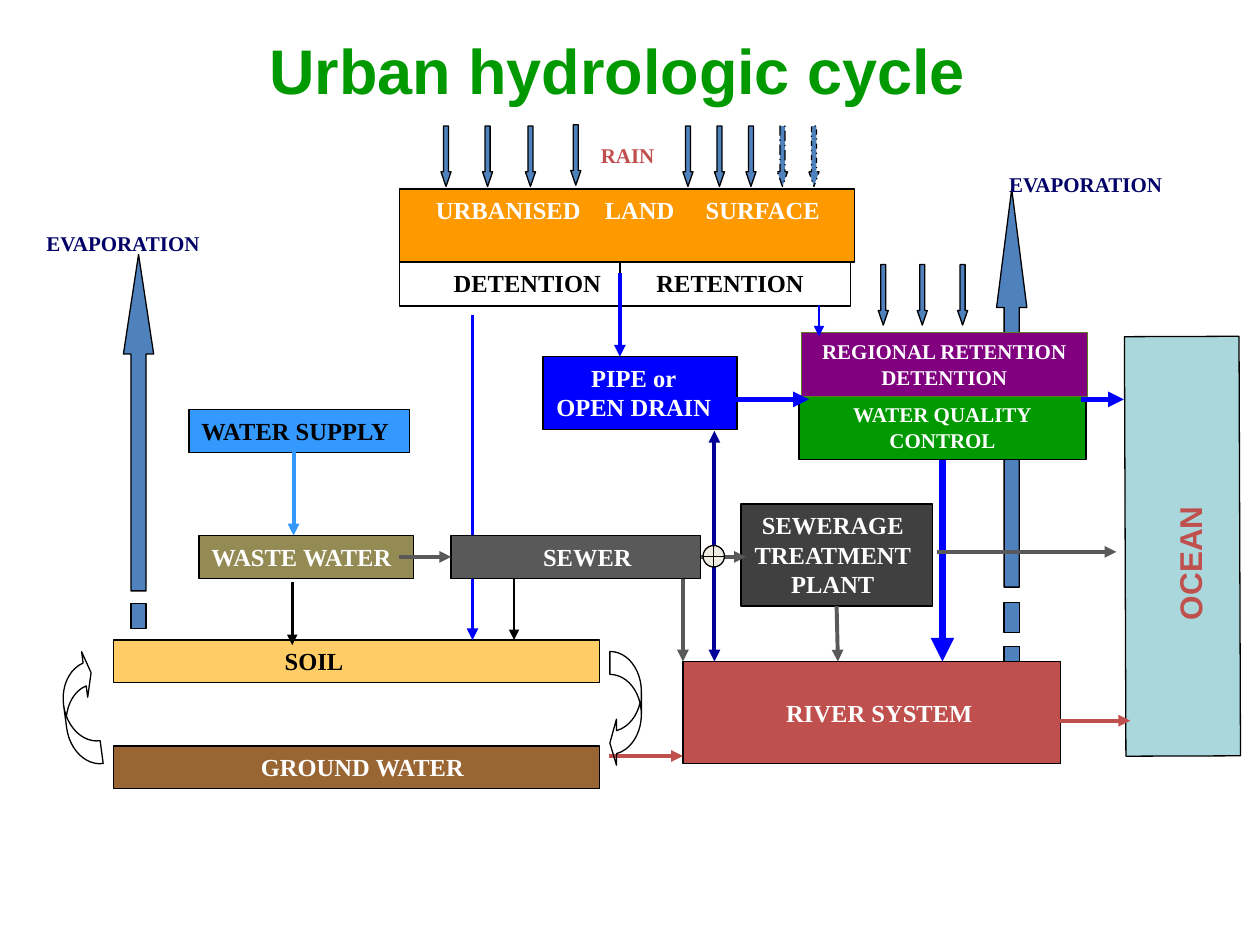
from dataclasses import dataclass
from typing import NamedTuple

from lxml import etree
from pptx import Presentation
from pptx.dml.color import RGBColor
from pptx.enum.dml import MSO_LINE
from pptx.enum.shapes import MSO_CONNECTOR, MSO_SHAPE
from pptx.enum.text import MSO_ANCHOR, MSO_AUTO_SIZE, PP_ALIGN
from pptx.oxml.ns import qn
from pptx.util import Inches, Pt

LEFT, CENTER = PP_ALIGN.LEFT, PP_ALIGN.CENTER
TOP, MIDDLE = MSO_ANCHOR.TOP, MSO_ANCHOR.MIDDLE
RECTANGLE, DOWN_ARROW = MSO_SHAPE.RECTANGLE, MSO_SHAPE.DOWN_ARROW
CURVED_ARROW, JUNCTION = MSO_SHAPE.CURVED_LEFT_ARROW, MSO_SHAPE.FLOWCHART_OR
STRAIGHT = MSO_CONNECTOR.STRAIGHT
LONG_DASH_DOT, DASH_DOT = MSO_LINE.LONG_DASH_DOT, MSO_LINE.DASH_DOT
BOTTOM_SIDE, LEFT_SIDE = 2, 1


@dataclass(frozen=True)
class Theme:
    heading_font: str = "Arial"
    body_font: str = "Times New Roman"
    title_size: int = 36
    ocean_size: int = 18
    body_size: int = 14
    small_size: int = 12
    black: str = "000000"
    white: str = "FFFFFF"
    green: str = "009900"
    blue: str = "0000FF"
    light_blue: str = "3399FF"
    dark_blue: str = "000099"
    navy: str = "000066"
    steel: str = "4F81BD"
    red: str = "C0504D"
    gray: str = "595959"
    dark_gray: str = "404040"
    aqua: str = "A9D7DB"
    purple: str = "800080"
    olive: str = "5E7D21"
    khaki: str = "948A54"
    orange: str = "FF9900"
    sand: str = "FFCC66"
    brown: str = "996633"
    cream: str = "EEECE1"


THEME = Theme()


class Box(NamedTuple):
    text: str
    left: float
    top: float
    width: float
    height: float
    fill: str | None
    color: str = THEME.white
    size: int = THEME.body_size
    font: str = THEME.body_font
    align: PP_ALIGN = LEFT
    anchor: MSO_ANCHOR = TOP
    insets: tuple[float, float, float] = (0.1, 0.05, 0.1)
    tabs: tuple[float, ...] = ()
    line: str = THEME.black
    line_width: float = 0.75
    rotation: float = 0


class Flow(NamedTuple):
    start: tuple[float, float]
    end: tuple[float, float]
    color: str
    width: float = 2.25
    source: str | None = None
    target: str | None = None


BOXES = {
    "ocean": Box("OCEAN", 7.72, 3.88, 3.33, 0.91, THEME.aqua, THEME.red, THEME.ocean_size,
                 THEME.heading_font, CENTER, insets=(0.1, 0.36, 0.37), rotation=269.8),
    "river": Box("RIVER SYSTEM", 5.42, 5.25, 3, 0.81, THEME.red, anchor=MIDDLE, insets=(0.82, 0.05, 0.1)),
    "quality": Box("WATER QUALITY\nCONTROL", 6.34, 3.14, 2.28, 0.51, THEME.green,
                   size=THEME.small_size, align=CENTER),
    "regional": Box("REGIONAL RETENTION\nDETENTION", 6.36, 2.64, 2.27, 0.51, THEME.purple,
                    size=THEME.small_size, align=CENTER, line=THEME.olive),
    "waste": Box("WASTE WATER", 1.58, 4.25, 1.7, 0.34, THEME.khaki),
    "supply": Box("WATER SUPPLY", 1.5, 3.25, 1.75, 0.34, THEME.light_blue, THEME.black),
    "detention": Box("DETENTION", 3.17, 2.08, 1.75, 0.35, None, THEME.black,
                     insets=(0.43, 0.05, 0.1), line_width=1),
    "retention": Box("RETENTION", 4.92, 2.08, 1.83, 0.35, None, THEME.black,
                     insets=(0.29, 0.05, 0.1), line_width=1),
    "land": Box("URBANISED\tLAND\tSURFACE", 3.17, 1.5, 3.61, 0.58, THEME.orange,
                insets=(0.29, 0.05, 0.1), tabs=(1.34, 2.14)),
    "plant": Box("SEWERAGE\nTREATMENT\nPLANT", 5.88, 4, 1.52, 0.81, THEME.dark_gray,
                 align=CENTER, insets=(0.05, 0.05, 0.11)),
    "soil": Box("SOIL", 0.9, 5.08, 3.86, 0.34, THEME.sand, THEME.black, insets=(1.36, 0.05, 0.1)),
    "ground": Box("GROUND WATER", 0.9, 5.92, 3.86, 0.34, THEME.brown, insets=(1.17, 0.05, 0.1)),
    "pipe": Box("PIPE or\nOPEN DRAIN", 4.31, 2.83, 1.54, 0.58, THEME.blue,
                align=CENTER, insets=(0.05, 0.05, 0.15)),
}
SEWER = Box("SEWER", 3.58, 4.25, 1.98, 0.34, THEME.gray, insets=(0.73, 0.05, 0.1))

BACK_FLOWS = [
    Flow((4.92, 2.17), (4.92, 2.83), THEME.blue),
    Flow((6.64, 4.81), (6.65, 5.25), THEME.gray, source="plant"),
    Flow((4.08, 4.58), (4.08, 5.08), THEME.black, 1.5),
    Flow((2.32, 4.62), (2.32, 5.12), THEME.black, 1.5),
    Flow((2.33, 3.58), (2.33, 4.25), THEME.light_blue),
    Flow((5.42, 4.58), (5.42, 5.25), THEME.gray),
    Flow((7.48, 3.65), (7.48, 5.25), THEME.blue, 4.5, source="quality"),
    Flow((5.83, 3.17), (6.42, 3.17), THEME.blue, 3),
    Flow((5.5, 4.42), (5.92, 4.42), THEME.gray),
    Flow((4.83, 6), (5.42, 6), THEME.red),
    Flow((3.75, 2.5), (3.75, 5.08), THEME.blue),
    Flow((5.67, 4.42), (5.67, 3.42), THEME.dark_blue),
    Flow((5.67, 4.42), (5.67, 5.25), THEME.dark_blue),
]
FRONT_FLOWS = [
    Flow((3.17, 4.42), (3.58, 4.42), THEME.gray, target="sewer"),
    Flow((7.44, 4.38), (8.86, 4.38), THEME.gray),
    Flow((6.5, 2.42), (6.5, 2.67), THEME.blue, 0.75),
    Flow((8.58, 3.17), (8.92, 3.17), THEME.blue, 3),
    Flow((8.39, 5.72), (8.97, 5.72), THEME.red),
]
RAIN_ARROWS = [(left, 1, None) for left in (3.5, 3.83, 4.17, 5.42, 5.67, 5.92)]
RAIN_ARROWS += [(4.53, 0.99, None), (6.17, 1, LONG_DASH_DOT), (6.42, 1, DASH_DOT)]
RAIN_ARROWS += [(left, 2.1, None) for left in (6.97, 7.28, 7.6)]
LABELS = [
    ("RAIN", 4.67, 1.08, 0.7, THEME.red),
    ("EVAPORATION", 0.27, 1.78, 1.58, THEME.navy),
    ("EVAPORATION", 7.91, 1.31, 1.58, THEME.navy),
]


def write_text(frame, text: str, *, color: str, size: int, font: str = THEME.body_font,
               align=LEFT, anchor=TOP, insets=(0.1, 0.05, 0.1), tabs=()) -> None:
    frame.word_wrap = True
    frame.auto_size = MSO_AUTO_SIZE.NONE
    frame.vertical_anchor = anchor
    frame.margin_left, frame.margin_top, frame.margin_right = map(Inches, insets)
    frame.margin_bottom = Inches(0.05)
    for index, line in enumerate(text.split("\n")):
        paragraph = frame.add_paragraph() if index else frame.paragraphs[0]
        paragraph.alignment = align
        if tabs:
            tab_list = etree.SubElement(paragraph._p.get_or_add_pPr(), qn("a:tabLst"))
            for position in tabs:
                etree.SubElement(tab_list, qn("a:tab"), pos=str(Inches(position)), algn="l")
        run = paragraph.add_run()
        run.text = line
        run.font.name, run.font.size, run.font.bold = font, Pt(size), True
        run.font.color.rgb = RGBColor.from_string(color)


def style_shape(shape, fill: str | None, line: str = THEME.black, width: float = 0.75) -> None:
    shape.shadow.inherit = False
    if fill:
        shape.fill.solid()
        shape.fill.fore_color.rgb = RGBColor.from_string(fill)
    else:
        shape.fill.background()
    shape.line.color.rgb = RGBColor.from_string(line)
    shape.line.width = Pt(width)


def draw_preset(slide, kind, bounds: tuple[float, ...], fill: str | None, adjustments=(), rotation: float = 0):
    shape = slide.shapes.add_shape(kind, *map(Inches, bounds))
    style_shape(shape, fill)
    for index, value in enumerate(adjustments):
        shape.adjustments[index] = value
    shape.rotation = rotation
    return shape


def draw_box(slide, box: Box):
    shape = draw_preset(slide, RECTANGLE, box[1:5], box.fill, rotation=box.rotation)
    style_shape(shape, box.fill, box.line, box.line_width)
    write_text(shape.text_frame, box.text, color=box.color, size=box.size, font=box.font,
               align=box.align, anchor=box.anchor, insets=box.insets, tabs=box.tabs)
    return shape


def draw_flow(slide, flow: Flow, shapes: dict) -> None:
    connector = slide.shapes.add_connector(STRAIGHT, *map(Inches, flow.start + flow.end))
    if flow.source:
        connector.begin_connect(shapes[flow.source], BOTTOM_SIDE)
    if flow.target:
        connector.end_connect(shapes[flow.target], LEFT_SIDE)
    connector.line.color.rgb = RGBColor.from_string(flow.color)
    connector.line.width = Pt(flow.width)
    properties = connector._element.spPr
    etree.SubElement(properties.find(qn("a:ln")), qn("a:tailEnd"), type="triangle")
    etree.SubElement(properties, qn("a:effectLst"))


def draw_evaporation(slide, center: float, tip: float, shoulder: float, foot: float,
                     dashes: tuple[tuple[float, float], ...]) -> None:
    head, shaft = 0.12, 0.06
    outlines = [[(center, tip), (center - head, shoulder), (center - shaft, shoulder),
                 (center - shaft, foot), (center + shaft, foot), (center + shaft, shoulder),
                 (center + head, shoulder)]]
    outlines += [[(center - shaft, top), (center + shaft, top), (center + shaft, bottom),
                  (center - shaft, bottom)] for top, bottom in dashes]
    points = [[(Inches(x), Inches(y)) for x, y in outline] for outline in outlines]
    builder = slide.shapes.build_freeform(*points[0][0])
    builder.add_line_segments(points[0][1:])
    for outline in points[1:]:
        builder.move_to(*outline[0])
        builder.add_line_segments(outline[1:])
    style_shape(builder.convert_to_shape(), THEME.steel)


def main() -> None:
    presentation = Presentation()
    presentation.slide_width, presentation.slide_height = Inches(10), Inches(7.5)
    slide = presentation.slides.add_slide(presentation.slide_layouts[5])
    title = slide.shapes.title
    title.left, title.top, title.width, title.height = map(Inches, (0.4, 0.13, 9, 0.95))
    write_text(title.text_frame, "Urban hydrologic cycle", color=THEME.green, size=THEME.title_size,
               font=THEME.heading_font, align=CENTER, insets=(0.1, 0.12, 0.1))
    draw_evaporation(slide, 8.03, 1.5, 2.44, 4.66, ((4.78, 5.02), (5.13, 5.25)))
    draw_evaporation(slide, 1.1, 2.02, 2.81, 4.69, ((4.79, 4.99),))
    shapes = {name: draw_box(slide, box) for name, box in BOXES.items()}
    for flow in BACK_FLOWS:
        draw_flow(slide, flow, shapes)
    shapes["sewer"] = draw_box(slide, SEWER)
    draw_preset(slide, JUNCTION, (5.58, 4.33, 0.17, 0.17), THEME.cream)
    for flow in FRONT_FLOWS:
        draw_flow(slide, flow, shapes)
    for left, top, dash in RAIN_ARROWS:
        arrow = draw_preset(slide, DOWN_ARROW, (left, top, 0.08, 0.48), THEME.steel, (0.5, 1.45))
        if dash:
            arrow.line.dash_style = dash
    for left, rotation in ((4.84, 0), (0.51, 172.4)):
        draw_preset(slide, CURVED_ARROW, (left, 5.17, 0.25, 0.91), None, (0.73, 1.46, 0.21), rotation)
    for text, left, top, width, color in LABELS:
        label = slide.shapes.add_textbox(*map(Inches, (left, top, width, 0.3)))
        write_text(label.text_frame, text, color=color, size=THEME.small_size)
    presentation.save("out.pptx")


if __name__ == "__main__":
    main()
